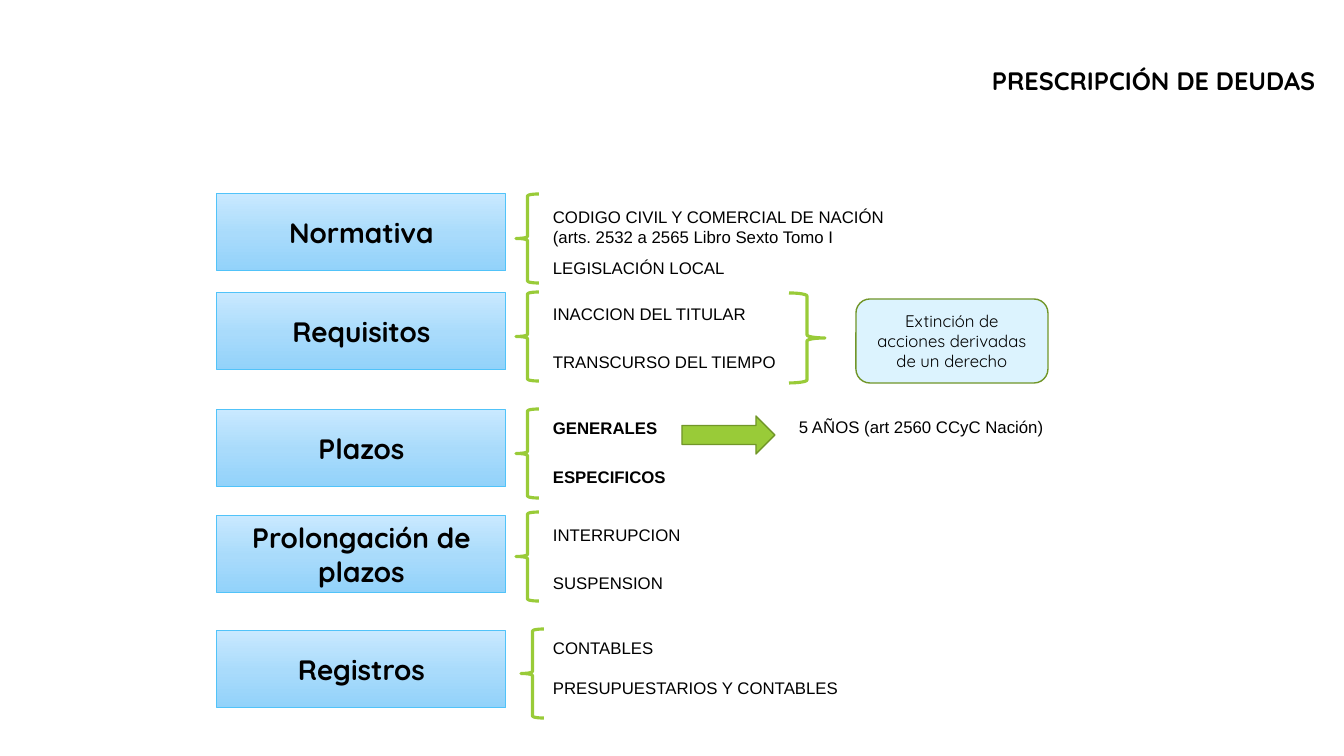
from copy import deepcopy
from dataclasses import dataclass

from pptx import Presentation
from pptx.dml.color import RGBColor
from pptx.enum.shapes import MSO_SHAPE as Preset
from pptx.enum.text import MSO_ANCHOR as Anchor, PP_ALIGN as Align
from pptx.oxml.ns import qn
from pptx.util import Emu, Pt

PX_PER_INCH = 100.8
BLACK = RGBColor(0x00, 0x00, 0x00)
GREEN = RGBColor(0x99, 0xCB, 0x38)
DARK_GREEN = RGBColor(0x71, 0x96, 0x29)
PALE_BLUE = RGBColor(0xDC, 0xF3, 0xFE)
SKY_BLUE = RGBColor(0x51, 0xC3, 0xF9)
TOPIC_STOPS = (
    (0, RGBColor(0xC9, 0xE9, 0xFF)),
    (0.52, RGBColor(0xA9, 0xDB, 0xFB)),
    (1, RGBColor(0x92, 0xD2, 0xFA)),
)

TITLE_FORMAT = {"name": "Quicksand", "size": Pt(18), "bold": True}
TOPIC_FORMAT = {"name": "Quicksand", "size": Pt(20), "bold": True}
EFFECT_FORMAT = {"name": "Quicksand", "size": Pt(12), "bold": False}
DETAIL_FORMAT = {"name": "Arial", "size": Pt(12), "bold": False}
STRONG_FORMAT = DETAIL_FORMAT | {"bold": True}


@dataclass(frozen=True)
class Box:
    left: int
    top: int
    width: int
    height: int


@dataclass(frozen=True)
class Detail:
    text: str
    top: int
    width: int
    height: int = 30


@dataclass(frozen=True)
class Topic:
    name: str
    top: int
    brace_top: int
    details: tuple[Detail, ...]
    brace_left: int = 516
    detail_format: dict | None = None


TOPICS = (
    Topic("Normativa", 194, 194, (
        Detail("CODIGO CIVIL Y COMERCIAL DE NACIÓN (arts. 2532 a 2565 Libro Sexto Tomo I",
               202, 389, 50),
        Detail("LEGISLACIÓN LOCAL", 253, 355),
    )),
    Topic("Requisitos", 293, 292, (
        Detail("INACCION DEL TITULAR", 299, 389),
        Detail("TRANSCURSO DEL TIEMPO", 347, 389),
    )),
    Topic("Plazos", 410, 409, (
        Detail("GENERALES", 413, 152),
        Detail("ESPECIFICOS", 462, 152),
    ), detail_format=STRONG_FORMAT),
    Topic("Prolongación de plazos", 516, 512, (
        Detail("INTERRUPCION", 520, 169),
        Detail("SUSPENSION", 568, 152),
    )),
    Topic("Registros", 631, 629, (
        Detail("CONTABLES", 633, 169),
        Detail("PRESUPUESTARIOS Y CONTABLES", 673, 347),
    ), brace_left=521),
)


def px(length: int) -> Emu:
    return Emu(round(length * 914400 / PX_PER_INCH))


def place(box: Box) -> tuple[Emu, ...]:
    return tuple(px(n) for n in (box.left, box.top, box.width, box.height))


def write(shape, text: str, font_format: dict, align=Align.LEFT) -> None:
    frame = shape.text_frame
    frame.word_wrap = True
    paragraph = frame.paragraphs[0]
    paragraph.alignment = align
    run = paragraph.add_run()
    run.text = text
    for attribute, value in font_format.items():
        setattr(run.font, attribute, value)
    run.font.color.rgb = BLACK


def add_text(slide, box: Box, text: str, font_format: dict) -> None:
    write(slide.shapes.add_textbox(*place(box)), text, font_format)


def add_outline(slide, preset, box: Box, line: RGBColor, weight: float,
                fill: RGBColor | None = None):
    shape = slide.shapes.add_shape(preset, *place(box))
    shape.shadow.inherit = False
    shape.line.color.rgb = line
    shape.line.width = Pt(weight)
    if fill is None:
        shape.fill.background()
    else:
        shape.fill.solid()
        shape.fill.fore_color.rgb = fill
    return shape


def add_label(shape, text: str, font_format: dict) -> None:
    write(shape, text, font_format, Align.CENTER)
    shape.text_frame.vertical_anchor = Anchor.MIDDLE


def shade(shape) -> None:
    shape.fill.gradient()
    shape.fill.gradient_angle = 270
    stop_list = shape._element.spPr.find(qn("a:gradFill")).find(qn("a:gsLst"))
    stop_list.append(deepcopy(stop_list[0]))
    for stop, (position, color) in zip(shape.fill.gradient_stops, TOPIC_STOPS):
        stop.position = position
        stop.color.rgb = color


def add_topic(slide, topic: Topic) -> None:
    heading = add_outline(slide, Preset.RECTANGLE, Box(217, topic.top, 289, 77),
                          SKY_BLUE, 0.75)
    shade(heading)
    add_label(heading, topic.name, TOPIC_FORMAT)
    add_outline(slide, Preset.LEFT_BRACE,
                Box(topic.brace_left, topic.brace_top, 23, 89), GREEN, 2.25)
    for detail in topic.details:
        add_text(slide, Box(543, detail.top, detail.width, detail.height),
                 detail.text, topic.detail_format or DETAIL_FORMAT)


def main() -> None:
    deck = Presentation()
    deck.slide_width, deck.slide_height = px(1344), px(756)
    slide = deck.slides.add_slide(deck.slide_layouts[6])

    add_text(slide, Box(982, 60, 386, 40), "PRESCRIPCIÓN DE DEUDAS", TITLE_FORMAT)
    for topic in TOPICS:
        add_topic(slide, topic)

    add_outline(slide, Preset.RIGHT_BRACE, Box(789, 293, 36, 90), GREEN, 2.25)
    effect = add_outline(slide, Preset.ROUNDED_RECTANGLE, Box(856, 299, 192, 84),
                         DARK_GREEN, 1, PALE_BLUE)
    add_label(effect, "Extinción de acciones derivadas de un derecho", EFFECT_FORMAT)

    add_outline(slide, Preset.RIGHT_ARROW, Box(682, 416, 93, 38), DARK_GREEN, 1, GREEN)
    add_text(slide, Box(789, 412, 283, 30), "5 AÑOS (art 2560 CCyC Nación)",
             DETAIL_FORMAT)
    deck.save("out.pptx")


if __name__ == "__main__":
    main()
